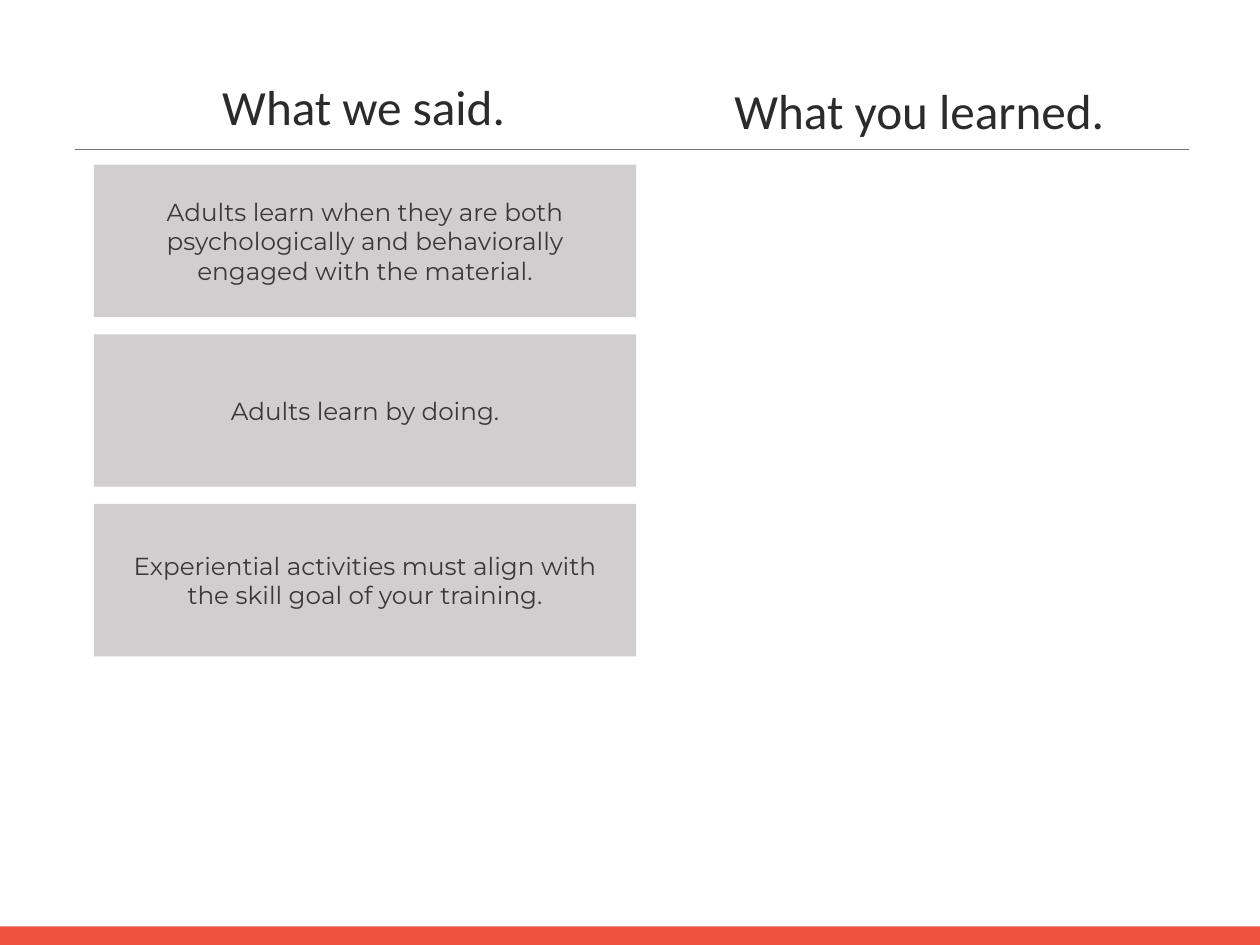
from pptx import Presentation
from pptx import util as u
from pptx.dml.color import RGBColor
from pptx.enum import shapes, text
from pptx.oxml import ns
from lxml import etree


def paint(color_format, value):
    color_format.rgb = RGBColor.from_string(value)


def write(box, words, font="Montserrat", size=20, color="3B3838", side=0.1, top=0.05):
    frame = box.text_frame
    frame.word_wrap = True
    frame.auto_size = text.MSO_AUTO_SIZE.NONE
    frame.vertical_anchor = text.MSO_ANCHOR.MIDDLE
    frame.margin_left = frame.margin_right = u.Inches(side)
    frame.margin_top = frame.margin_bottom = u.Inches(top)
    para = frame.paragraphs[0]
    para.alignment = text.PP_ALIGN.CENTER
    span = para.add_run()
    span.text = words
    span.font.name = font
    span.font.size = u.Pt(size)
    paint(span.font.color, color)


class ComparisonSlide:
    """Holds the slide and its style, and draws each kind of element."""

    accent = "ED5340"
    card_fill = "D0CECE"
    rule_color = "767171"
    heading_style = dict(font="Calibri", size=40, color="2C2A2A")

    def __init__(self, deck):
        self.slide = deck.slides.add_slide(deck.slide_layouts[5])

    def block(self, left, top, width, height, fill):
        box = self.slide.shapes.add_shape(
            shapes.MSO_SHAPE.RECTANGLE, *map(u.Inches, (left, top, width, height)))
        box.shadow.inherit = False
        box.fill.solid()
        paint(box.fill.fore_color, fill)
        box.line.fill.background()
        return box

    def card(self, left, top, width, height, words):
        box = self.block(left, top, width, height, self.card_fill)
        write(box, words, side=0.2, top=0.1)

    def rule(self, left, right, top):
        line = self.slide.shapes.add_connector(
            shapes.MSO_CONNECTOR.STRAIGHT, *map(u.Inches, (left, top, right, top)))
        paint(line.line.color, self.rule_color)
        line.line.width = u.Pt(1)
        etree.SubElement(line._element.spPr, ns.qn("a:effectLst"))

    def title(self, left, top, width, height, words):
        box = self.slide.shapes.title
        box.left, box.top, box.width, box.height = map(u.Inches, (left, top, width, height))
        write(box, words, **self.heading_style)

    def heading(self, left, top, width, height, words):
        box = self.slide.shapes.add_textbox(*map(u.Inches, (left, top, width, height)))
        write(box, words, **self.heading_style)


def main():
    deck = Presentation()
    deck.slide_width = u.Inches(14.22)
    deck.slide_height = u.Inches(10.67)
    page = ComparisonSlide(deck)
    page.block(0, 10.46, 14.22, 0.21, page.accent)
    page.rule(0.85, 13.42, 1.69)
    page.title(1.08, 0.83, 6.05, 0.72, "What we said.")
    page.heading(7.35, 0.88, 6.05, 0.72, "What you learned.")
    lessons = [
        "Adults learn when they are both psychologically and behaviorally "
        "engaged with the material.",
        "Adults learn by doing.",
        "Experiential activities must align with the skill goal of your training.",
    ]
    for row, lesson in enumerate(lessons):
        page.card(1.06, 1.86 + 1.915 * row, 6.12, 1.72, lesson)
    deck.save("out.pptx")


if __name__ == "__main__":
    main()
